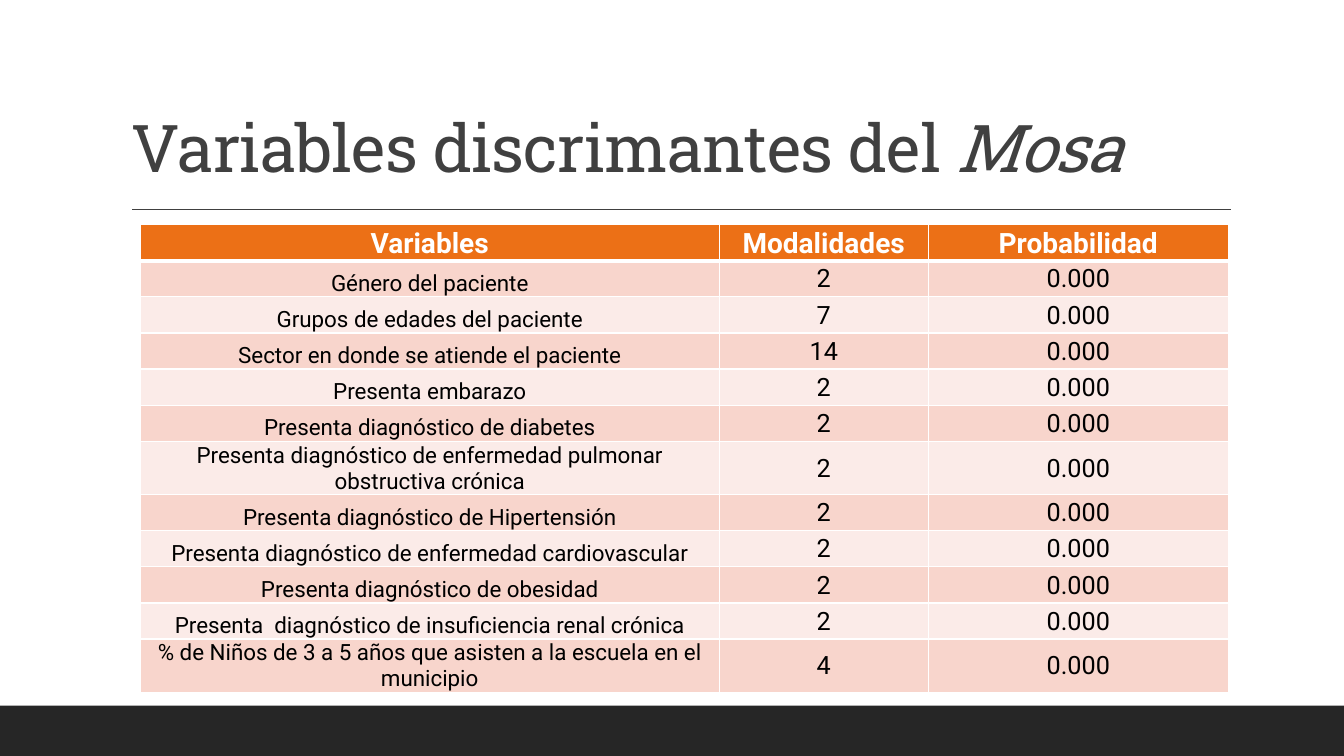
from dataclasses import dataclass

from lxml.etree import SubElement
from pptx import Presentation
from pptx.dml.color import RGBColor
from pptx.enum.shapes import MSO_CONNECTOR, MSO_SHAPE
from pptx.enum.text import MSO_ANCHOR, MSO_AUTO_SIZE, PP_ALIGN
from pptx.oxml.ns import qn
from pptx.slide import Slide
from pptx.table import _Cell
from pptx.util import Cm, Pt

WHITE = RGBColor(0xFF, 0xFF, 0xFF)
BLACK = RGBColor(0, 0, 0)
CHARCOAL = RGBColor(0x26, 0x26, 0x26)
GREY = RGBColor(0x40, 0x40, 0x40)
ORANGE = RGBColor(0xEC, 0x70, 0x16)
ROW_FILLS = (RGBColor(0xF8, 0xD5, 0xCC), RGBColor(0xFB, 0xEB, 0xE8))

SLIDE_WIDTH, SLIDE_HEIGHT = Cm(33.87), Cm(19.05)
FOOTER_HEIGHT = Cm(1.27)
COLUMN_WIDTHS = (Cm(14.6), Cm(5.26), Cm(7.57))
ROW_HEIGHT, TALL_ROW_HEIGHT = Cm(0.91), Cm(1.32)
HEADINGS = ("Variables", "Modalidades", "Probabilidad")


@dataclass(frozen=True)
class Variable:
    name: str
    categories: int
    probability: str = "0.000"
    height: int = ROW_HEIGHT


@dataclass(frozen=True)
class CellStyle:
    size: int
    color: RGBColor
    fill: RGBColor
    anchor: MSO_ANCHOR
    bold: bool = False
    top_border: int = 1
    bottom_border: int = 1


VARIABLES = (
    Variable("Género del paciente", 2),
    Variable("Grupos de edades del paciente", 7),
    Variable("Sector en donde se atiende el paciente", 14),
    Variable("Presenta embarazo", 2),
    Variable("Presenta diagnóstico de diabetes", 2),
    Variable("Presenta diagnóstico de enfermedad pulmonar obstructiva crónica", 2,
             height=TALL_ROW_HEIGHT),
    Variable("Presenta diagnóstico de Hipertensión", 2),
    Variable("Presenta diagnóstico de enfermedad cardiovascular", 2),
    Variable("Presenta diagnóstico de obesidad", 2),
    Variable("Presenta  diagnóstico de insuficiencia renal crónica", 2),
    Variable("% de Niños de 3 a 5 años que asisten a la escuela en el municipio", 4,
             height=TALL_ROW_HEIGHT),
)


def add_border(cell: _Cell, side: str, points: int) -> None:
    properties = cell._tc.get_or_add_tcPr()
    line = SubElement(properties, qn(f"a:ln{side}"), w=str(Pt(points)))
    fill = SubElement(line, qn("a:solidFill"))
    SubElement(fill, qn("a:srgbClr"), val=str(WHITE))


def fill_cell(cell: _Cell, text: str, style: CellStyle) -> None:
    """Write one centred cell; borders go in before the fill, as the schema asks."""
    add_border(cell, "L", 1)
    add_border(cell, "R", 1)
    add_border(cell, "T", style.top_border)
    add_border(cell, "B", style.bottom_border)
    cell.fill.solid()
    cell.fill.fore_color.rgb = style.fill
    cell.margin_left = cell.margin_right = cell.margin_top = Cm(0.03)
    cell.margin_bottom = 0
    cell.vertical_anchor = style.anchor
    paragraph = cell.text_frame.paragraphs[0]
    paragraph.text = text
    paragraph.alignment = PP_ALIGN.CENTER
    font = paragraph.runs[0].font
    font.name, font.size, font.bold = "Roboto", Pt(style.size), style.bold
    font.color.rgb = style.color


def add_background_parts(slide: Slide) -> None:
    footer = slide.shapes.add_shape(MSO_SHAPE.RECTANGLE, 0, SLIDE_HEIGHT - FOOTER_HEIGHT,
                                    SLIDE_WIDTH, FOOTER_HEIGHT)
    footer.shadow.inherit = False
    footer.fill.solid()
    footer.fill.fore_color.rgb = CHARCOAL
    footer.line.fill.background()
    rule = slide.shapes.add_connector(MSO_CONNECTOR.STRAIGHT, Cm(3.33), Cm(5.28),
                                      Cm(31.01), Cm(5.28))
    rule.line.color.rgb = GREY
    rule.line.width = Pt(1)
    SubElement(rule._element.spPr, qn("a:effectLst"))


def format_title(slide: Slide) -> None:
    title = slide.shapes.title
    title.left, title.top, title.width, title.height = Cm(3.05), Cm(0.79), Cm(27.94), Cm(4.04)
    frame = title.text_frame
    frame.auto_size = MSO_AUTO_SIZE.NONE
    frame.word_wrap = True
    frame.vertical_anchor = MSO_ANCHOR.BOTTOM
    paragraph = frame.paragraphs[0]
    paragraph.alignment = PP_ALIGN.LEFT
    paragraph.line_spacing = 0.9
    for text, italic in (("Variables discrimantes del ", False), ("Mosa", True)):
        run = paragraph.add_run()
        run.text = text
        font = run.font
        font.name, font.size, font.italic = "Roboto Slab", Pt(47), italic
        font.color.rgb = GREY
        run._r.get_or_add_rPr().set("spc", "-50")


def add_variables_table(slide: Slide) -> None:
    heights = [ROW_HEIGHT] + [variable.height for variable in VARIABLES]
    table = slide.shapes.add_table(len(heights), len(COLUMN_WIDTHS), Cm(3.53), Cm(5.66),
                                   sum(COLUMN_WIDTHS), sum(heights)).table
    for column, width in zip(table.columns, COLUMN_WIDTHS):
        column.width = width
    for row, height in zip(table.rows, heights):
        row.height = height

    heading_style = CellStyle(20, WHITE, ORANGE, MSO_ANCHOR.BOTTOM, bold=True, bottom_border=3)
    for column_index, heading in enumerate(HEADINGS):
        fill_cell(table.cell(0, column_index), heading, heading_style)

    for row_index, variable in enumerate(VARIABLES, start=1):
        fill = ROW_FILLS[(row_index - 1) % 2]
        top_border = 3 if row_index == 1 else 1
        name_style = CellStyle(16, BLACK, fill, MSO_ANCHOR.BOTTOM, top_border=top_border)
        value_style = CellStyle(18, BLACK, fill, MSO_ANCHOR.MIDDLE, top_border=top_border)
        fill_cell(table.cell(row_index, 0), variable.name, name_style)
        fill_cell(table.cell(row_index, 1), str(variable.categories), value_style)
        fill_cell(table.cell(row_index, 2), variable.probability, value_style)


def main() -> None:
    presentation = Presentation()
    presentation.slide_width, presentation.slide_height = SLIDE_WIDTH, SLIDE_HEIGHT
    slide = presentation.slides.add_slide(presentation.slide_layouts[5])
    add_background_parts(slide)
    format_title(slide)
    add_variables_table(slide)
    presentation.save("out.pptx")


if __name__ == "__main__":
    main()
